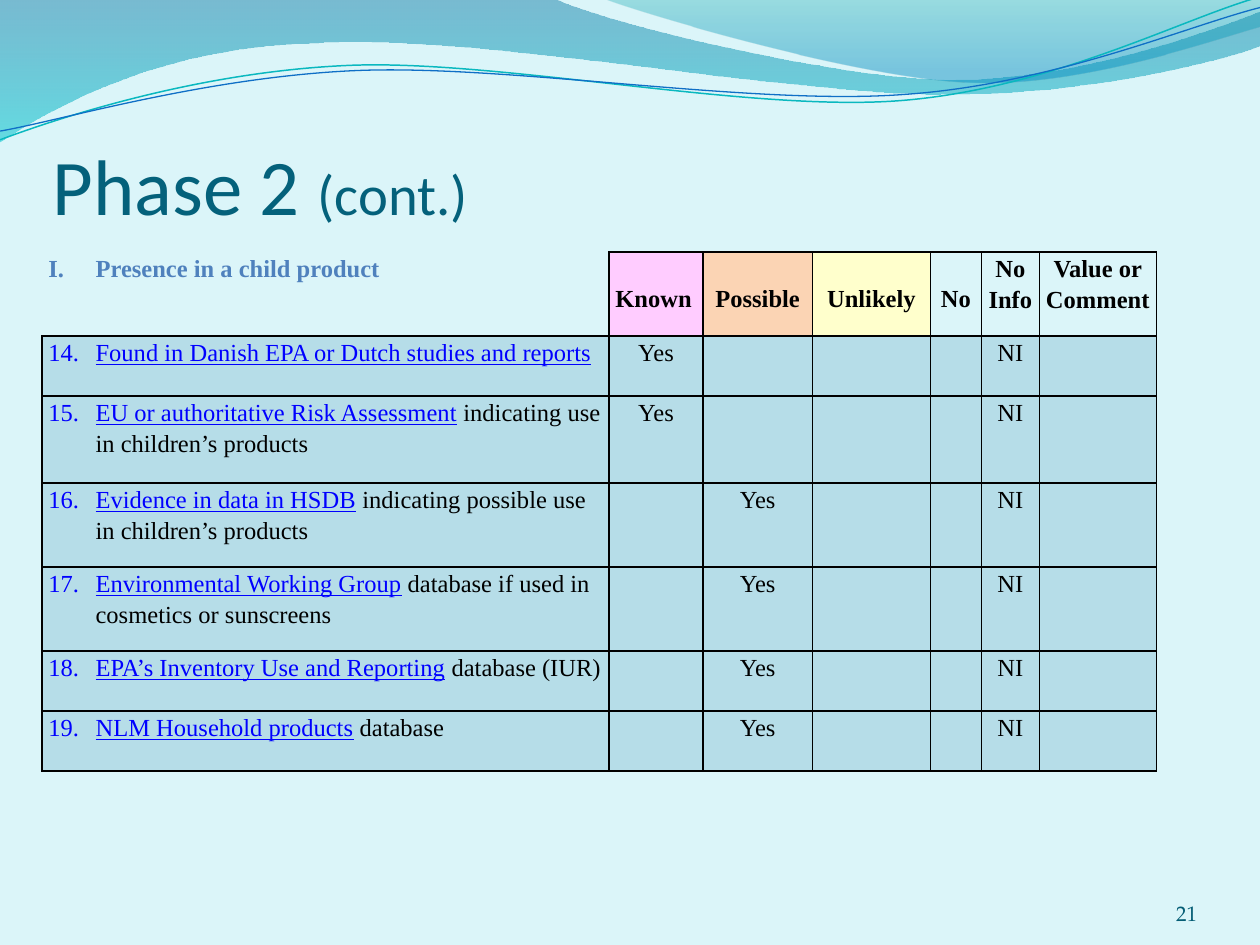
from lxml.etree import SubElement
from pptx import Presentation
from pptx.dml.color import RGBColor
from pptx.enum.text import MSO_ANCHOR, PP_ALIGN
from pptx.oxml.ns import qn
from pptx.util import Pt

# Colours
BACK = RGBColor(0xDB, 0xF5, 0xF9)
TITLE = RGBColor(0x04, 0x61, 0x7B)
NUMBER = RGBColor(0x04, 0x5D, 0x75)
BLACK = RGBColor(0, 0, 0)
LINK = RGBColor(0, 0, 0xFF)
HEADING = RGBColor(0x4F, 0x81, 0xBD)
BODY_FILL = RGBColor(0xB6, 0xDD, 0xE8)
PINK = RGBColor(0xFF, 0xCC, 0xFF)
ORANGE = RGBColor(0xFB, 0xD4, 0xB4)
YELLOW = RGBColor(0xFF, 0xFF, 0xCC)
TEAL_LINE = RGBColor(0x0A, 0xB8, 0xBF)
BLUE_LINE = RGBColor(0x0F, 0x6F, 0xC6)

# Table content
HEADING_TEXT = "Presence in a child product"
HEADERS = [  # lines, fill, alignment
    (["Known"], PINK, PP_ALIGN.LEFT),
    (["Possible"], ORANGE, PP_ALIGN.CENTER),
    (["Unlikely"], YELLOW, PP_ALIGN.CENTER),
    (["No"], None, PP_ALIGN.CENTER),
    (["No", "Info"], None, PP_ALIGN.CENTER),
    (["Value or", "Comment"], None, PP_ALIGN.CENTER),
]
KNOWN, POSSIBLE, NO_INFO = 1, 2, 5
FIRST_NUMBER = 14
SOURCES = [  # linked words, remaining words, column holding "Yes"
    ("Found in Danish EPA or Dutch studies and reports", "", KNOWN),
    ("EU or authoritative Risk Assessment", " indicating use in children’s products", KNOWN),
    ("Evidence in data in HSDB", " indicating possible use in children’s products", POSSIBLE),
    ("Environmental Working Group", " database if used in cosmetics or sunscreens", POSSIBLE),
    ("EPA’s Inventory Use and Reporting", " database (IUR)", POSSIBLE),
    ("NLM Household products", " database", POSSIBLE),
]
COL_WIDTHS = [324, 53.8, 62.4, 67.6, 29, 33.2, 66.8]
ROW_HEIGHTS = [48, 34.3, 49.7, 48, 48, 34.3, 34.3]

# Waves: a start point, then segments of one point (line) or three (curve)
BANDS = [  # start, segments, gradient stops (position, colour, opacity)
    ((0, 0),
     [[(316.8, -0.7)],
      [(342.7, 12.2), (478.1, 45.4), (545.8, 45.4)],
      [(614.2, 45.4), (689.8, 18.7), (720, 6.5)],
      [(720.7, 25.9)],
      [(707.8, 31.7), (626.4, 54.7), (537.1, 54)],
      [(447.8, 54), (275, 20.2), (185, 24.5)],
      [(92.9, 25.9), (33.1, 59.8), (-0.7, 81.4)],
      [(0, 0)]],
     [(0, RGBColor(0, 0x74, 0xA1), 45), (1, RGBColor(0, 0xC6, 0xCF), 55)]),
    ((344.9, -0.7),
     [[(366.5, 7.9), (491, 44.6), (553.7, 46.8)],
      [(616.3, 49.7), (691.9, 23), (720, 15.1)],
      [(720, 0)],
      [(344.9, -0.7)]],
     [(0, RGBColor(0, 0xA1, 0xA9), 30), (0.8, RGBColor(0, 0x8B, 0xBF), 45)]),
]
STROKES = [  # start, segments, colour, width
    ((0, 79.9),
     [[(34.6, 67), (113.8, 41), (199.4, 37.4)],
      [(284.4, 33.8), (427, 64.1), (513.4, 57.6)],
      [(599.8, 51.1), (675.4, 10.8), (718.6, -1.4)]], TEAL_LINE, 0.85),
    ((0, 74.9),
     [[(33.8, 69.1), (118.1, 43.9), (203.8, 40.3)],
      [(290.2, 36.7), (429.8, 60.5), (516.2, 54)],
      [(601.9, 48.2), (677.5, 15.1), (720, 4.3)]], BLUE_LINE, 0.75),
]


def add_wave(s, start, segments, close):
    points = [(Pt(x), Pt(y)) for seg in segments for x, y in seg]
    builder = s.shapes.build_freeform(Pt(start[0]), Pt(start[1]))
    builder.add_line_segments(points, close=close)
    sp = builder.convert_to_shape()
    sp.shadow.inherit = False
    # Join each three line points into one Bezier segment
    path = next(sp._element.iter(qn("a:path")))
    lines = iter(path.findall(qn("a:lnTo")))
    for seg in segments:
        steps = [next(lines) for _ in seg]
        if len(steps) == 3:
            curve = SubElement(path, qn("a:cubicBezTo"))
            path.replace(steps[0], curve)
            for step in steps:
                curve.append(step[0])
            for step in steps[1:]:
                path.remove(step)
    return sp


def add_run(p, text, font, size, color, bold=False, underline=False):
    r = p.add_run()
    r.text = text
    f = r.font
    f.name, f.size, f.bold, f.underline = font, Pt(size), bold, underline
    f.color.rgb = color


def add_cell_run(p, text, color=BLACK, **style):
    p.line_spacing = 1.15
    add_run(p, text, "Times New Roman", 14, color, **style)


def number_item(p, kind, start):
    pPr = p._p.get_or_add_pPr()
    pPr.set("marL", str(Pt(27)))
    pPr.set("indent", str(-Pt(27)))
    SubElement(pPr, qn("a:buAutoNum"), type=kind, startAt=str(start))


def format_cell(cell, fill, hidden=()):
    cell.margin_left = cell.margin_right = Pt(3.6)
    cell.margin_top = cell.margin_bottom = 0
    tcPr = cell._tc.get_or_add_tcPr()
    for side in ("lnL", "lnR", "lnT", "lnB"):
        ln = SubElement(tcPr, qn("a:" + side), w=str(Pt(1)))
        if side in hidden:
            SubElement(ln, qn("a:noFill"))
        else:
            solid = SubElement(ln, qn("a:solidFill"))
            SubElement(solid, qn("a:srgbClr"), val=str(BLACK))
    if fill is None:
        cell.fill.background()
    else:
        cell.fill.solid()
        cell.fill.fore_color.rgb = fill


prs = Presentation()
prs.slide_width, prs.slide_height = Pt(720), Pt(540)
s = prs.slides.add_slide(prs.slide_layouts[5])
s.background.fill.solid()
s.background.fill.fore_color.rgb = BACK

# Wave decoration
for start, segments, stops in BANDS:
    sp = add_wave(s, start, segments, True)
    sp.line.fill.background()
    sp.fill.gradient()
    sp.fill.gradient_angle = 270
    for stop, (position, color, _) in zip(sp.fill.gradient_stops, stops):
        stop.position = position
        stop.color.rgb = color
    for clr, (_, _, opacity) in zip(sp._element.spPr.iter(qn("a:srgbClr")), stops):
        SubElement(clr, qn("a:alpha"), val=str(opacity * 1000))
for start, segments, color, width in STROKES:
    sp = add_wave(s, start, segments, False)
    sp.fill.background()
    sp.line.color.rgb = color
    sp.line.width = Pt(width)

# Title
title = s.shapes.title
title.left, title.top, title.width, title.height = Pt(30), Pt(78), Pt(648), Pt(54)
tf = title.text_frame
tf.vertical_anchor = MSO_ANCHOR.BOTTOM
tf.margin_left = tf.margin_right = tf.margin_bottom = 0
p = tf.paragraphs[0]
p.alignment = PP_ALIGN.LEFT
add_run(p, "Phase 2 ", "Calibri", 45, TITLE)
add_run(p, "(cont.)", "Calibri", 32.4, TITLE)

# Table
table = s.shapes.add_table(len(ROW_HEIGHTS), len(COL_WIDTHS), Pt(24), Pt(144),
                           Pt(sum(COL_WIDTHS)), Pt(sum(ROW_HEIGHTS))).table
table.first_row = table.horz_banding = False
for col, width in zip(table.columns, COL_WIDTHS):
    col.width = Pt(width)
for row, height in zip(table.rows, ROW_HEIGHTS):
    row.height = Pt(height)

# Header row
cell = table.cell(0, 0)
format_cell(cell, None, hidden=("lnL", "lnT"))
p = cell.text_frame.paragraphs[0]
add_cell_run(p, HEADING_TEXT, HEADING, bold=True)
number_item(p, "romanUcPeriod", 1)
for c, (lines, fill, align) in enumerate(HEADERS, 1):
    cell = table.cell(0, c)
    format_cell(cell, fill)
    if len(lines) == 1:  # level with the second line of its neighbours
        cell.margin_top = Pt(17.2)
    tf = cell.text_frame
    for i, line in enumerate(lines):
        p = tf.add_paragraph() if i else tf.paragraphs[0]
        p.alignment = align
        add_cell_run(p, line, bold=True)

# Source rows
for r, (linked, rest, yes_col) in enumerate(SOURCES, 1):
    marks = {yes_col: "Yes", NO_INFO: "NI"}
    for c in range(len(COL_WIDTHS)):
        cell = table.cell(r, c)
        format_cell(cell, BODY_FILL)
        p = cell.text_frame.paragraphs[0]
        if c == 0:
            add_cell_run(p, linked, LINK, underline=True)
            if rest:
                add_cell_run(p, rest)
            number_item(p, "arabicPeriod", FIRST_NUMBER + r - 1)
        elif c in marks:
            p.alignment = PP_ALIGN.CENTER
            add_cell_run(p, marks[c])

# Slide number
tf = s.shapes.add_textbox(Pt(624), Pt(500.4), Pt(60), Pt(28.8)).text_frame
tf.word_wrap = True
tf.vertical_anchor = MSO_ANCHOR.BOTTOM
tf.margin_left = tf.margin_right = tf.margin_top = tf.margin_bottom = 0
p = tf.paragraphs[0]
p.alignment = PP_ALIGN.RIGHT
add_run(p, "21", "TeX Gyre Pagella", 12, NUMBER)

prs.save("out.pptx")
